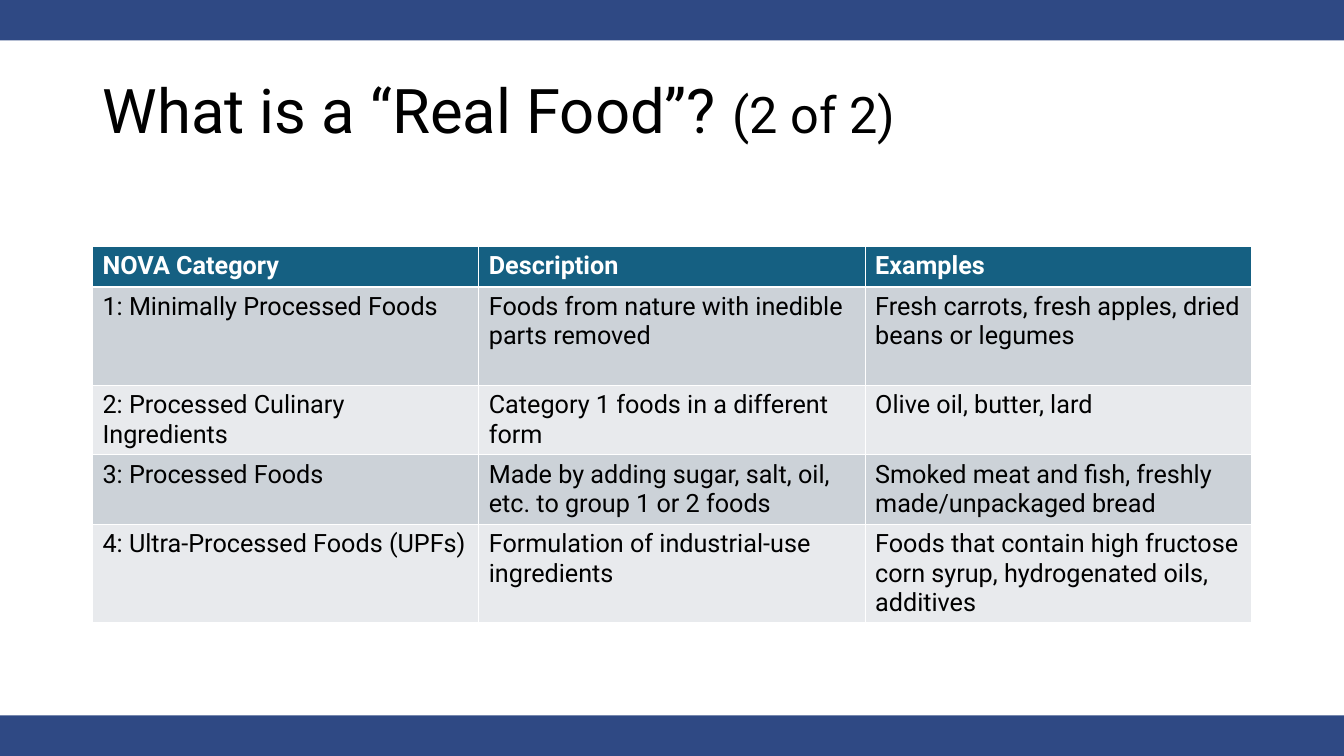
from dataclasses import dataclass

from pptx import Presentation
from pptx.dml.color import RGBColor
from pptx.enum.shapes import MSO_SHAPE as Shape
from pptx.enum.text import MSO_ANCHOR as Anchor, MSO_AUTO_SIZE as AutoSize, PP_ALIGN as Align
from pptx.util import Cm, Pt


@dataclass(frozen=True)
class Theme:
    font: str = "Roboto"
    bar: RGBColor = RGBColor.from_string("2F4984")
    header: RGBColor = RGBColor.from_string("156082")
    odd_row: RGBColor = RGBColor.from_string("CCD2D8")
    even_row: RGBColor = RGBColor.from_string("E8EAED")
    dark: RGBColor = RGBColor.from_string("000000")
    light: RGBColor = RGBColor.from_string("FFFFFF")
    title_size: Pt = Pt(44)
    part_size: Pt = Pt(36)
    table_size: Pt = Pt(18)


theme = Theme()


def style_span(span, size, color, bold=False):
    span.font.name = theme.font
    span.font.size = size
    span.font.color.rgb = color
    span.font.bold = bold


deck = Presentation()
deck.slide_width, deck.slide_height = Cm(33.87), Cm(19.05)
page = deck.slides.add_slide(deck.slide_layouts.get_by_name("Title Only"))

# Bars along the top and bottom edges
bar_height = Cm(1.02)
for top in (0, deck.slide_height - bar_height):
    bar = page.shapes.add_shape(Shape.RECTANGLE, 0, top, deck.slide_width, bar_height)
    bar.shadow.inherit = False
    bar.fill.solid()
    bar.fill.fore_color.rgb = theme.bar
    bar.line.fill.background()

# Title
left, content_width = Cm(2.33), Cm(29.21)
title = page.shapes.title
title.left, title.top, title.width, title.height = left, bar_height, content_width, Cm(3.68)
title.text_frame.auto_size = AutoSize.NONE
title.text_frame.vertical_anchor = Anchor.MIDDLE
para = title.text_frame.paragraphs[0]
para.alignment = Align.LEFT
para.line_spacing = 0.9
for text, size in (("What is a “Real Food”? ", theme.title_size), ("(2 of 2)", theme.part_size)):
    span = para.add_run()
    span.text = text
    style_span(span, size, theme.dark)

# Table of food categories: row height in cm, then the cell texts
rows = [
    (1.03, "NOVA Category", "Description", "Examples"),
    (2.48, "1: Minimally Processed Foods", "Foods from nature with inedible parts removed",
     "Fresh carrots, fresh apples, dried beans or legumes"),
    (1.75, "2: Processed Culinary Ingredients", "Category 1 foods in a different form",
     "Olive oil, butter, lard"),
    (1.75, "3: Processed Foods", "Made by adding sugar, salt, oil, etc. to group 1 or 2 foods",
     "Smoked meat and fish, freshly made/unpackaged bread"),
    (2.48, "4: Ultra-Processed Foods (UPFs)", "Formulation of industrial-use ingredients",
     "Foods that contain high fructose corn syrup, hydrogenated oils, additives"),
]
table_height = Cm(sum(row[0] for row in rows))
table = page.shapes.add_table(len(rows), 3, left, Cm(6.2), content_width, table_height).table
for row_index, (height, *texts) in enumerate(rows):
    table.rows[row_index].height = Cm(height)
    is_header = row_index == 0
    if is_header:
        fill_color = theme.header
    else:
        fill_color = theme.odd_row if row_index % 2 else theme.even_row
    for column_index, text in enumerate(texts):
        cell = table.cell(row_index, column_index)
        cell.fill.solid()
        cell.fill.fore_color.rgb = fill_color
        cell.text_frame.text = text
        span = cell.text_frame.paragraphs[0].runs[0]
        style_span(span, theme.table_size, theme.light if is_header else theme.dark, is_header)

deck.save("out.pptx")
